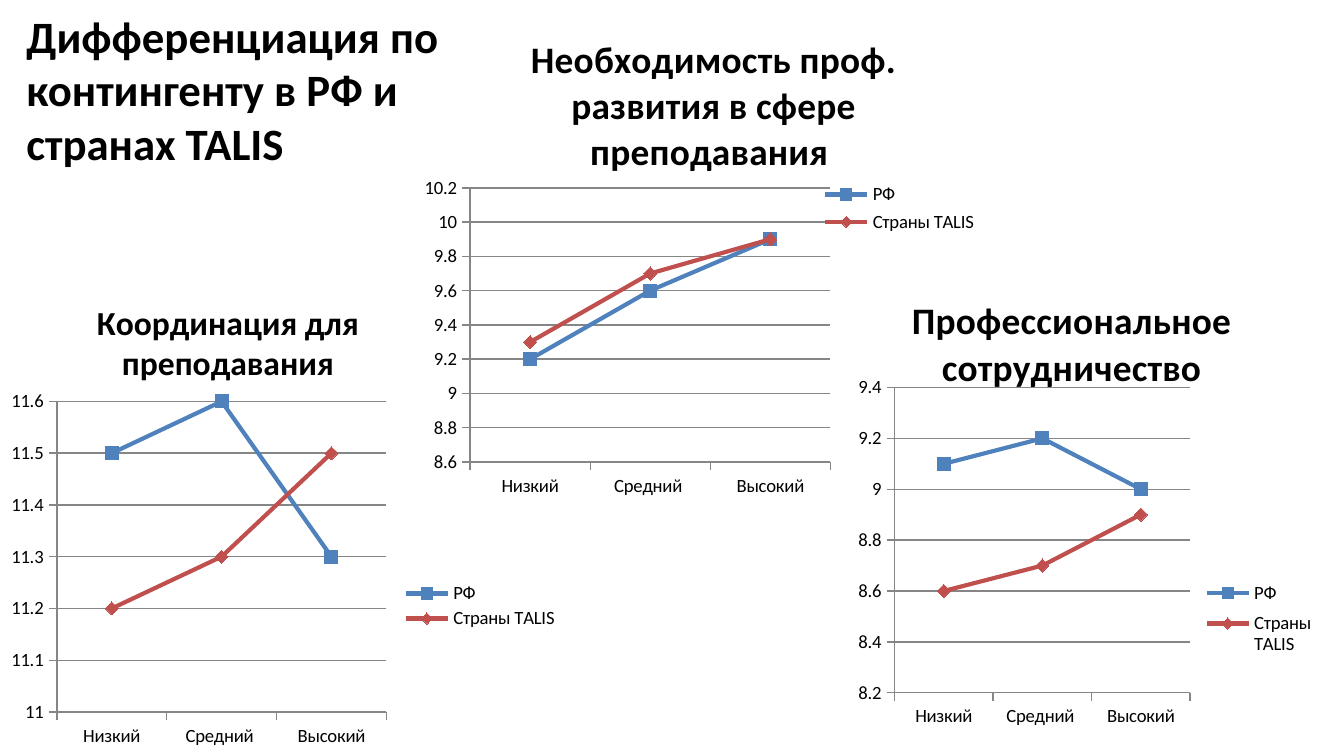
from lxml import etree
from pptx import Presentation
from pptx import util as u
from pptx.chart import data as cd
from pptx.dml import color as col
from pptx.enum import chart as ce, text
from pptx.oxml import ns

HUES = {"ink": "000000", "grid": "868686", "rf": "4F81BD", "talis": "C0504D"}
FONT = "Calibri"
LEVELS = ["Низкий", "Средний ", "Высокий"]
GROUPS = [("РФ", "rf", ce.XL_MARKER_STYLE.SQUARE),
          ("Страны TALIS", "talis", ce.XL_MARKER_STYLE.DIAMOND)]


def rgb(name):
    return col.RGBColor.from_string(HUES[name])


def place(node, index, box, inner=False):
    """Give a chart part a fixed place, as shares of the chart area."""
    for old in node.findall(ns.qn("c:layout")):
        node.remove(old)
    layout = etree.Element(ns.qn("c:layout"))
    manual = etree.SubElement(layout, ns.qn("c:manualLayout"))
    rows = [("layoutTarget", "inner")] if inner else []
    rows += [("xMode", "edge"), ("yMode", "edge")]
    rows += zip("xywh", box)
    for tag, val in rows:
        etree.SubElement(manual, ns.qn("c:" + tag)).set("val", str(val))
    node.insert(index, layout)


class Deck:
    def __init__(self):
        self.prs = Presentation()
        self.prs.slide_width, self.prs.slide_height = u.Cm(25.4), u.Cm(14.29)
        self.slide = self.prs.slides.add_slide(self.prs.slide_layouts[6])

    def style(self, font, size, bold=False):
        font.name, font.size, font.bold = FONT, u.Pt(size), bold
        font.color.rgb = rgb("ink")

    def run(self, para, words, size):
        run = para.add_run()
        run.text = words
        self.style(run.font, size, True)

    def head(self, box, words, size):
        frame = self.slide.shapes.add_textbox(*map(u.Cm, box)).text_frame
        frame.word_wrap = True
        frame.vertical_anchor = text.MSO_ANCHOR.BOTTOM
        self.run(frame.paragraphs[0], words, size)

    def axis(self, axis):
        axis.format.line.color.rgb = rgb("grid")
        axis.format.line.width = u.Pt(0.75)
        axis.major_tick_mark = ce.XL_TICK_MARK.OUTSIDE
        axis.minor_tick_mark = ce.XL_TICK_MARK.NONE
        self.style(axis.tick_labels.font, 10)

    def chart(self, box, title, size, scale, rows, spots):
        data = cd.CategoryChartData()
        data.categories = LEVELS
        for (name, _, _), vals in zip(GROUPS, rows):
            data.add_series(name, vals)
        chart = self.slide.shapes.add_chart(
            ce.XL_CHART_TYPE.LINE_MARKERS, *map(u.Cm, box), data).chart
        self.style(chart.font, 10)

        # Title and legend
        chart.has_title = True
        self.run(chart.chart_title.text_frame.paragraphs[0], title, size)
        chart.has_legend = True
        chart.legend.position = ce.XL_LEGEND_POSITION.RIGHT
        chart.legend.include_in_layout = False
        self.style(chart.legend.font, 10)

        # Axes
        self.axis(chart.category_axis)
        axis = chart.value_axis
        self.axis(axis)
        axis.minimum_scale, axis.maximum_scale, axis.major_unit = scale
        axis.has_major_gridlines = True
        line = axis.major_gridlines.format.line
        line.color.rgb, line.width = rgb("grid"), u.Pt(0.75)

        # Lines and markers
        chart.plots[0].vary_by_categories = False
        for item, (_, hue, mark) in zip(chart.plots[0].series, GROUPS):
            item.smooth = False
            item.format.line.color.rgb = rgb(hue)
            item.format.line.width = u.Pt(2.25)
            item.marker.style, item.marker.size = mark, 7
            item.marker.format.fill.solid()
            item.marker.format.fill.fore_color.rgb = rgb(hue)
            item.marker.format.line.color.rgb = rgb(hue)

        # Places of the parts
        name, plot, key = spots
        place(chart.chart_title._element, 1, name)
        place(chart._chartSpace.chart.plotArea, 0, plot, True)
        place(chart.legend._element, 1, key)


def main():
    deck = Deck()
    deck.head((0.25, 0.33, 9.37, 3),
              "Дифференциация по контингенту в РФ и странах TALIS", 24)

    # Each chart: title, plot and legend places come last
    deck.chart((7.75, 0, 11.35, 9.6),
               "Необходимость проф. развития в сфере преподавания ", 20,
               (8.6, 10.2, 0.2), [(9.2, 9.6, 9.9), (9.3, 9.7, 9.9)],
               [(0.19, 0.05), (0.1, 0.37, 0.6, 0.54),
                (0.68, 0.35, 0.27, 0.12)])
    deck.chart((15.01, 4.8, 9.98, 9.02),
               "Профессиональное сотрудничество", 20,
               (8.2, 9.4, 0.2), [(9.1, 9.2, 9), (8.6, 8.7, 8.9)],
               [(0.21, 0.07), (0.19, 0.28, 0.56, 0.64),
                (0.77, 0.67, 0.22, 0.19)])
    deck.chart((0, 4.98, 10.74, 9.32),
               "Координация для преподавания", 18,
               (11, 11.6, 0.1), [(11.5, 11.6, 11.3), (11.2, 11.3, 11.5)],
               [(0.16, 0.06), (0.1, 0.28, 0.58, 0.63),
                (0.7, 0.64, 0.29, 0.11)])
    deck.prs.save("out.pptx")


if __name__ == "__main__":
    main()
